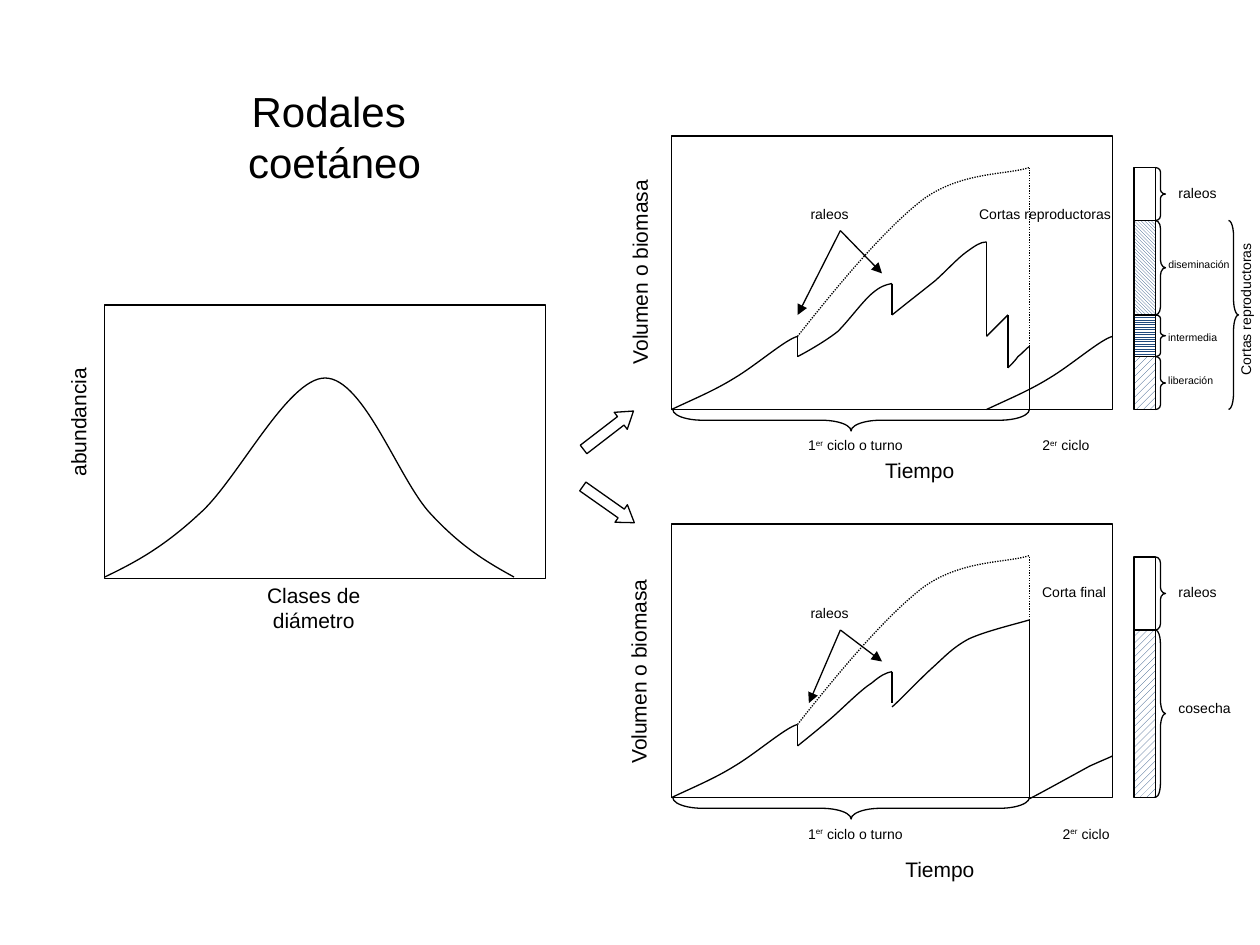
from pptx import Presentation
from pptx.dml.color import RGBColor
from pptx.enum import dml, shapes, text
from pptx.oxml.ns import qn
from pptx.util import Inches, Pt
from lxml import etree

BLACK = RGBColor(0x00, 0x00, 0x00)
WHITE = RGBColor(0xFF, 0xFF, 0xFF)
BLUE = RGBColor(0x1F, 0x49, 0x7D)
KIND = shapes.MSO_SHAPE
HATCH = dml.MSO_PATTERN
DOTS = dml.MSO_LINE.ROUND_DOT
DROP = 3.08  # from the upper chart to the lower one
TALL = {12: 0.3, 8: 0.23, 6: 0.2}  # label height by text size

deck = Presentation()
deck.slide_width, deck.slide_height = Inches(10), Inches(7.5)
slide = deck.slides.add_slide(deck.slide_layouts[5])
items = slide.shapes


def curve(start, *spans, dy=0):
    """Open outline through cubic spans, each (x1, y1, x2, y2, x3, y3)."""
    pen = items.build_freeform(Inches(start[0]), Inches(start[1] + dy))
    pen.add_line_segments([(Inches(s[4]), Inches(s[5] + dy)) for s in spans], close=False)
    line = pen.convert_to_shape()
    line.fill.background()
    # Turn each straight step into a cubic one with its two control points
    for step, span in zip(list(line._element.iter(qn("a:lnTo"))), spans):
        step.tag = qn("a:cubicBezTo")
        for i in (0, 1):
            spot = etree.Element(qn("a:pt"))
            spot.set("x", str(Inches(span[2 * i]) - line.left))
            spot.set("y", str(Inches(span[2 * i + 1] + dy) - line.top))
            step.insert(i, spot)
    return line


def label(words, x, y, w, size, turn=0):
    """Centred label; every second part between bars is superscript."""
    box = items.add_textbox(Inches(x), Inches(y), Inches(w), Inches(TALL[size]))
    box.rotation = turn
    frame = box.text_frame
    frame.word_wrap = False
    frame.vertical_anchor = text.MSO_ANCHOR.MIDDLE
    para = frame.paragraphs[0]
    para.alignment = text.PP_ALIGN.CENTER
    for i, part in enumerate(words.split("|")):
        run = para.add_run()
        run.text = part
        for name, value in {"size": Pt(size), "name": "Arial"}.items():
            setattr(run.font, name, value)
        run.font.color.rgb = BLACK
        if i % 2:
            run.font._element.set("baseline", "30000")


# Title
title = items.title
title.text = "Rodales \vcoetáneo"
for key, value in {"left": 1.42, "top": 0.63, "width": 2.47, "height": 0.9}.items():
    setattr(title, key, Inches(value))
title.text_frame.auto_size = text.MSO_AUTO_SIZE.NONE
title.text_frame.vertical_anchor = text.MSO_ANCHOR.MIDDLE
head = title.text_frame.paragraphs[0]
head.alignment = text.PP_ALIGN.CENTER
for run in head.runs:
    for key, value in {"size": Pt(24), "name": "Arial"}.items():
        setattr(run.font, key, value)
    run.font.color.rgb = BLACK

# Chart frames
for x, y in ((5.33, 1.08 + DROP), (5.33, 1.08), (0.83, 2.42)):
    frame = items.add_shape(KIND.RECTANGLE, Inches(x), Inches(y), Inches(3.5), Inches(2.17))
    frame.fill.solid()
    frame.fill.fore_color.rgb = WHITE

# Bar parts: top, height, pattern
bars = (
    (1.33, 0.42, None),
    (1.75, 0.75, HATCH.LIGHT_DOWNWARD_DIAGONAL),
    (2.5, 0.33, HATCH.LIGHT_HORIZONTAL),
    (2.83, 0.42, HATCH.WIDE_UPWARD_DIAGONAL),
    (4.42, 0.58, None),
    (5, 1.33, HATCH.WIDE_UPWARD_DIAGONAL),
)
braces = [(KIND.RIGHT_BRACE, 9.75, 1.75, 0.08, 1.5, 0)]
for y, h, hatch in bars:
    bar = items.add_shape(KIND.RECTANGLE, Inches(9), Inches(y), Inches(0.17), Inches(h))
    if hatch:
        bar.fill.patterned()
        bar.fill.pattern = hatch
        bar.fill.fore_color.rgb, bar.fill.back_color.rgb = BLUE, WHITE
    else:
        bar.fill.background()
    braces.append((KIND.RIGHT_BRACE, 9.17, y, 0.08, h, 0))

# Parts shared by both charts on the right
dotted = []
for dy in (0, DROP):
    dotted.append(curve((6.33, 2.67), (6.67, 2.24, 7.03, 1.81, 7.33, 1.58),
                        (7.64, 1.36, 7.99, 1.39, 8.17, 1.33), dy=dy))
    curve((5.33, 3.25), (5.5, 3.17, 5.67, 3.1, 5.83, 3),
          (6, 2.9, 6.24, 2.69, 6.33, 2.67), dy=dy)
    braces.append((KIND.LEFT_BRACE, 6.67, 1.92 + dy, 0.17, 2.83, 270))
    label("1|er| ciclo o turno", 6.31, 3.42 + dy, 0.96, 8)

for kind, x, y, w, h, turn in braces:
    brace = items.add_shape(kind, Inches(x), Inches(y), Inches(w), Inches(h))
    brace.adjustments[0] = h / w / 12
    brace.rotation = turn
    brace.fill.background()

# Other growth curves
curve((0.83, 4.58), (1.06, 4.47, 1.29, 4.35, 1.58, 4.08), (1.88, 3.82, 2.28, 3, 2.58, 3),
      (2.89, 3, 3.17, 3.82, 3.42, 4.08), (3.67, 4.35, 3.88, 4.47, 4.08, 4.58))
curve((6.33, 2.83), (6.39, 2.8, 6.55, 2.71, 6.65, 2.63),
      (6.74, 2.54, 6.84, 2.4, 6.92, 2.33), (6.99, 2.27, 7.03, 2.26, 7.08, 2.25))
curve((7.08, 2.5), (7.14, 2.45, 7.32, 2.31, 7.42, 2.23),
      (7.51, 2.15, 7.6, 2.05, 7.67, 2), (7.74, 1.95, 7.78, 1.92, 7.83, 1.92))
curve((7.83, 3.25), (8, 3.17, 8.17, 3.1, 8.33, 3), (8.5, 2.9, 8.74, 2.69, 8.83, 2.67))
curve((7.83, 2.67), (7.86, 2.64, 7.89, 2.61, 7.92, 2.58), (7.94, 2.56, 7.99, 2.51, 8, 2.5))
curve((8, 2.92), (8.03, 2.89, 8.06, 2.86, 8.08, 2.83), (8.11, 2.81, 8.15, 2.76, 8.17, 2.75))
curve((6.33, 5.92), (6.38, 5.88, 6.53, 5.76, 6.62, 5.68),
      (6.72, 5.59, 6.84, 5.47, 6.92, 5.42), (6.99, 5.36, 7.03, 5.34, 7.08, 5.33))
curve((7.08, 5.61), (7.14, 5.56, 7.3, 5.39, 7.4, 5.3),
      (7.5, 5.21, 7.56, 5.14, 7.69, 5.07), (7.82, 5.01, 8.07, 4.95, 8.17, 4.92))
curve((8.17, 6.34), (8.25, 6.3, 8.54, 6.14, 8.65, 6.08), (8.76, 6.03, 8.79, 6.02, 8.83, 6))

# Straight lines: x1, y1, x2, y2, style
lines = (
    (6.33, 2.67, 6.33, 2.83, ""), (7.08, 2.25, 7.08, 2.5, ""),
    (7.83, 1.92, 7.83, 2.67, ""), (8, 2.5, 8, 2.92, ""),
    (8.17, 2.75, 8.17, 3.25, ""), (8.17, 2.75, 8.17, 1.33, "dots"),
    (6.33, 5.75, 6.33, 5.92, ""), (7.08, 5.33, 7.08, 5.58, ""),
    (8.17, 4.42, 8.17, 4.92, "dots"), (8.17, 4.92, 8.17, 6.33, ""),
    (6.67, 1.83, 7, 2.17, "arrow"), (6.67, 1.83, 6.33, 2.5, "arrow"),
    (6.67, 5, 7, 5.25, "arrow"), (6.67, 5, 6.42, 5.58, "arrow"),
)
arrows = []
for *ends, style in lines:
    line = items.add_connector(shapes.MSO_CONNECTOR.STRAIGHT, *map(Inches, ends))
    if style == "dots":
        dotted.append(line)
    elif style == "arrow":
        arrows.append(line)

# Block arrows between the charts
for y, turn in ((3.33, 322.4), (3.92, 35.1)):
    arrow = items.add_shape(KIND.RIGHT_ARROW, Inches(4.58), Inches(y), Inches(0.5), Inches(0.17))
    arrow.rotation = turn
    arrow.adjustments[1] = 0.75
    arrow.fill.background()

# Labels: words, left, top, width, size, rotation
for row in (
    ("Clases de diámetro", 1.74, 4.67, 1.5, 12),
    ("abundancia", 0.02, 3.2, 1.2, 12, 270),
    ("Tiempo", 6.92, 3.58, 0.76, 12), ("Tiempo", 7.08, 6.75, 0.76, 12),
    ("Volumen o biomasa", 4.24, 2.01, 1.67, 12, 270),
    ("Volumen o biomasa", 4.23, 5.18, 1.67, 12, 270),
    ("raleos", 6.33, 1.58, 0.51, 8), ("raleos", 6.33, 4.75, 0.51, 8),
    ("raleos", 9.25, 1.42, 0.51, 8), ("raleos", 9.25, 4.58, 0.51, 8),
    ("Corta final", 8.17, 4.58, 0.71, 8), ("cosecha", 9.25, 5.5, 0.62, 8),
    ("Cortas reproductoras", 7.67, 1.58, 1.25, 8),
    ("Cortas reproductoras", 9.26, 2.34, 1.25, 8, 270),
    ("2|er| ciclo", 8.17, 3.42, 0.58, 8), ("2|er| ciclo", 8.33, 6.5, 0.58, 8),
    ("diseminación", 9.17, 2, 0.69, 6), ("intermedia", 9.17, 2.58, 0.59, 6),
    ("liberación", 9.17, 2.92, 0.56, 6, 359.6),
):
    label(*row)

# Outline for everything that is drawn
for item in items:
    if item.shape_type in (shapes.MSO_SHAPE_TYPE.TEXT_BOX, shapes.MSO_SHAPE_TYPE.PLACEHOLDER):
        continue
    item.line.color.rgb = BLACK
    item.line.width = Pt(0.75)
    etree.SubElement(item._element.spPr, qn("a:effectLst"))
for item in dotted:
    item.line.dash_style = DOTS
for item in arrows:
    etree.SubElement(item.line._get_or_add_ln(), qn("a:tailEnd"), type="triangle")

deck.save("out.pptx")
